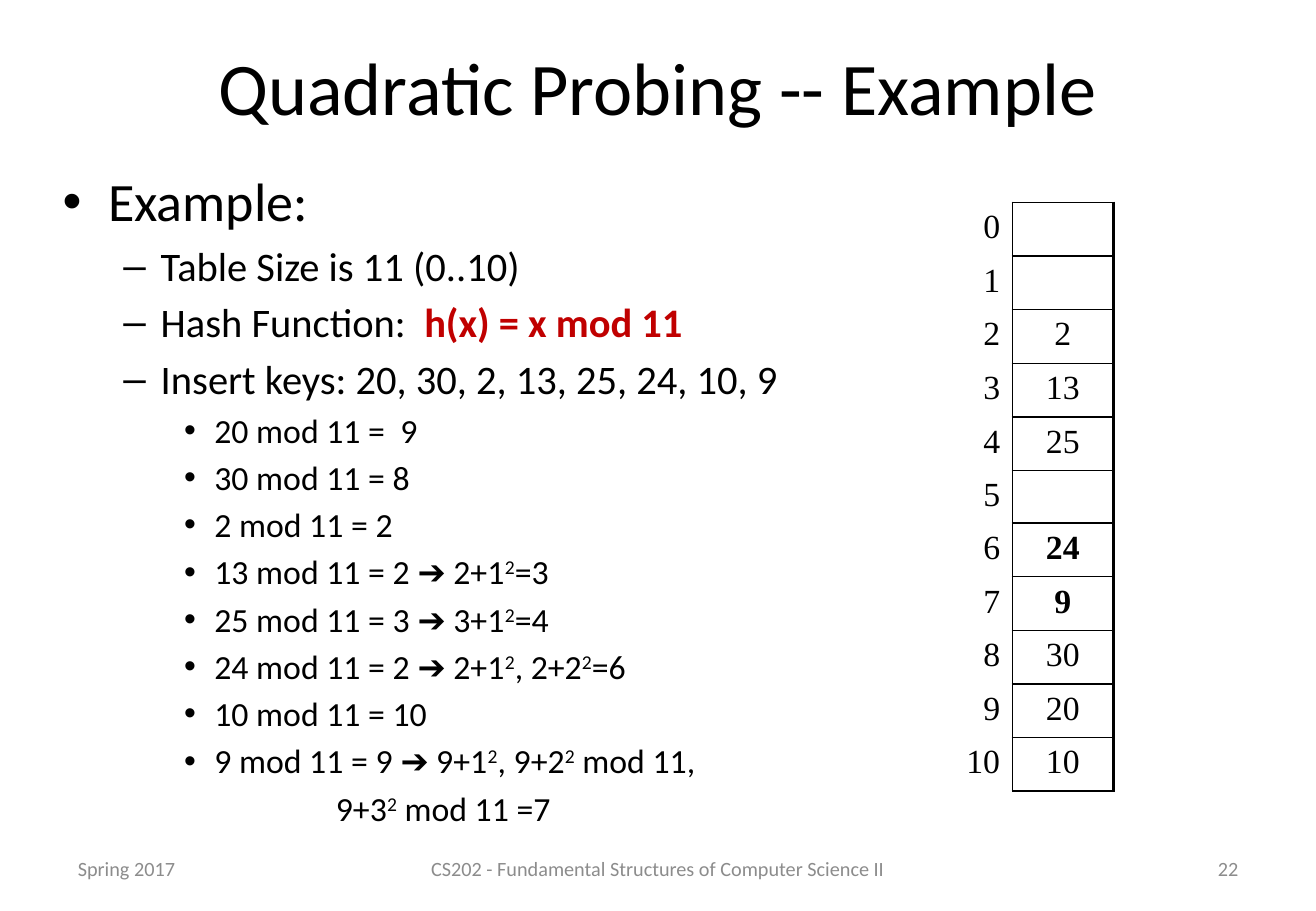
from lxml import etree
from pptx import Presentation
from pptx import util as u
from pptx.dml.color import RGBColor
from pptx.enum import text
from pptx.oxml.ns import qn

SCALE = 7620
BLACK, RED, GREY = "000000", "C00000", "8C8C8C"
SANS, SERIF = "Calibri", "Times New Roman"
LEFT, CENTER, RIGHT = text.PP_ALIGN.LEFT, text.PP_ALIGN.CENTER, text.PP_ALIGN.RIGHT
MIDDLE, TOP = text.MSO_ANCHOR.MIDDLE, text.MSO_ANCHOR.TOP


def px(length):
    return u.Emu(length * SCALE)


def color(value):
    return RGBColor.from_string(value)


def add_span(para, words, size=20, font=SANS, ink=BLACK, bold=False, raised=False):
    span = para.add_run()
    span.text = words
    span.font.size = u.Pt(size)
    span.font.name = font
    span.font.color.rgb = color(ink)
    span.font.bold = bold
    if raised:
        span._r.get_or_add_rPr().set("baseline", "30000")


def write(para, words, align=LEFT, **style):
    para.alignment = align
    plain, *powers = words.split("^")
    add_span(para, plain, **style)
    for power in powers:
        add_span(para, power[0], raised=True, **style)
        if power[1:]:
            add_span(para, power[1:], **style)


def format_para(para, bullet=None, margin=0, hang=0):
    props = para._p.get_or_add_pPr()
    props.set("marL", str(px(margin)))
    props.set("indent", str(px(-hang)))
    space = etree.SubElement(props, qn("a:spcBef"))
    etree.SubElement(space, qn("a:spcPct"), val="20000")
    if bullet:
        etree.SubElement(props, qn("a:buFont"), typeface="Arial")
        etree.SubElement(props, qn("a:buChar"), char=bullet)
    else:
        etree.SubElement(props, qn("a:buNone"))


class Slide:
    levels = {
        0: dict(size=32, bullet="•", margin=45, hang=45),
        1: dict(size=24, bullet="–", margin=97, hang=37),
        2: dict(size=20, bullet="•", margin=150, hang=30),
        3: dict(size=20, margin=270),
    }

    def __init__(self, deck):
        self.page = deck.slides.add_slide(deck.slide_layouts[5])

    def title(self, words, left, top, width, height):
        box = self.page.shapes.title
        box.left, box.top, box.width, box.height = map(px, (left, top, width, height))
        box.text_frame.vertical_anchor = MIDDLE
        write(box.text_frame.paragraphs[0], words, align=CENTER, size=44)

    def frame(self, left, top, width, height, anchor=TOP):
        box = self.page.shapes.add_textbox(*map(px, (left, top, width, height)))
        box.text_frame.word_wrap = True
        box.text_frame.vertical_anchor = anchor
        return box.text_frame

    def footer(self, words, left, width, align):
        frame = self.frame(left, 834, width, 48, MIDDLE)
        write(frame.paragraphs[0], words, align=align, size=12, ink=GREY)

    def outline(self, items, left, top, width, height):
        frame = self.frame(left, top, width, height)
        for index, (level, words, accent) in enumerate(items):
            para = frame.add_paragraph() if index else frame.paragraphs[0]
            layout = dict(self.levels[level])
            size = layout.pop("size")
            write(para, words, size=size)
            if accent:
                add_span(para, accent, size=size, ink=RED, bold=True)
            format_para(para, **layout)

    def border(self, cell, **widths):
        props = cell._tc.get_or_add_tcPr()
        for side, width in widths.items():
            line = etree.SubElement(props, qn("a:ln" + side), w=str(u.Pt(width)))
            fill = etree.SubElement(line, qn("a:solidFill"))
            etree.SubElement(fill, qn("a:srgbClr"), val=BLACK)

    def cell(self, cell, words, align, bold=False, **borders):
        self.border(cell, **borders)
        cell.fill.background()
        para = cell.text_frame.paragraphs[0]
        if words:
            write(para, words, align=align, font=SERIF, bold=bold)
        format_para(para)

    def hash_table(self, slots, probed, left, top, widths, heights):
        shape = self.page.shapes.add_table(
            len(slots), 2, px(left), px(top), px(sum(widths)), px(sum(heights)))
        table = shape.table
        table.first_row = table.horz_banding = False
        for column, width in zip(table.columns, widths):
            column.width = px(width)
        for index, (row, height, key) in enumerate(zip(table.rows, heights, slots)):
            row.height = px(height)
            self.cell(row.cells[0], str(index), RIGHT, R=1)
            self.cell(row.cells[1], key, CENTER, key in probed, L=1, R=2.25, T=1, B=1)


def main():
    deck = Presentation()
    deck.slide_width, deck.slide_height = px(1300), px(900)
    slide = Slide(deck)
    slide.title("Quadratic Probing -- Example", 65, 30, 1170, 110)
    steps = [
        "20 mod 11 =  9",
        "30 mod 11 = 8",
        "2 mod 11 = 2",
        "13 mod 11 = 2 ➔ 2+1^2=3",
        "25 mod 11 = 3 ➔ 3+1^2=4",
        "24 mod 11 = 2 ➔ 2+1^2, 2+2^2=6",
        "10 mod 11 = 10",
        "9 mod 11 = 9 ➔ 9+1^2, 9+2^2 mod 11,",
    ]
    items = [
        (0, "Example:", ""),
        (1, "Table Size is 11 (0..10)", ""),
        (1, "Hash Function:  ", "h(x) = x mod 11"),
        (1, "Insert keys: 20, 30, 2, 13, 25, 24, 10, 9", ""),
        *((2, step, "") for step in steps),
        (3, "9+3^2 mod 11 =7", ""),
    ]
    slide.outline(items, 50, 160, 810, 670)
    slide.footer("Spring 2017", 65, 304, LEFT)
    slide.footer("CS202 - Fundamental Structures of Computer Science II", 410, 480, CENTER)
    slide.footer("22", 931, 304, RIGHT)
    slots = ["", "", "2", "13", "25", "", "24", "9", "30", "20", "10"]
    heights = [53] * 5 + [48] + [53] * 5
    slide.hash_table(slots, {"24", "9"}, 930, 200, [70, 100], heights)
    deck.save("out.pptx")


if __name__ == "__main__":
    main()
